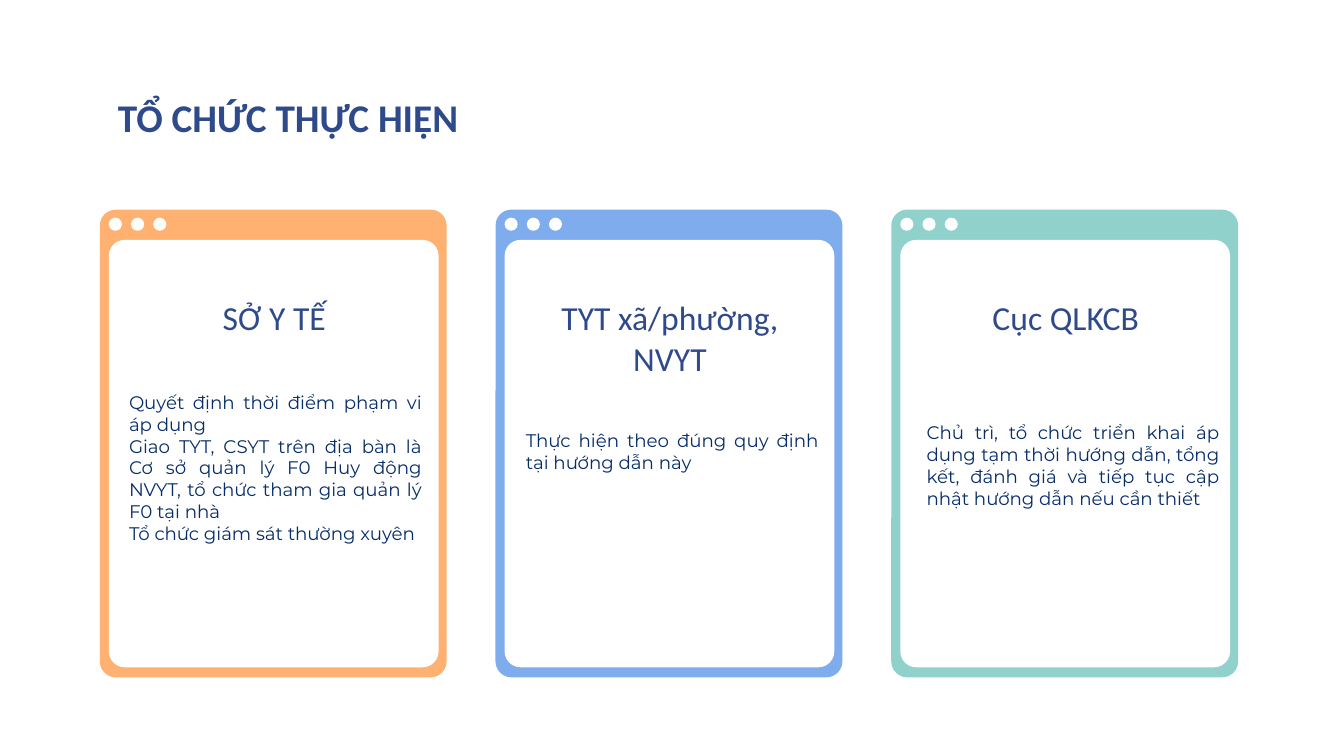
from pptx import Presentation
from pptx.dml.color import RGBColor
from pptx.enum.shapes import MSO_SHAPE
from pptx.enum.text import MSO_ANCHOR, PP_ALIGN
from pptx.util import Inches, Pt

NAVY, INK, WHITE = "2F4A8A", "072D69", "FFFFFF"
CARD_LEFT, CARD_TOP, CARD_W, CARD_H, CARD_PITCH = 0.99, 2.08, 3.44, 4.64, 3.925
CARDS = [
    ("FFB172", "SỞ Y TẾ", 0.16, 1.67,
     "Quyết định thời điểm phạm vi áp dụng\n"
     "Giao TYT, CSYT trên địa bàn là Cơ sở quản lý F0 Huy động NVYT, "
     "tổ chức tham gia quản lý F0 tại nhà\n"
     "Tổ chức giám sát thường xuyên"),
    ("7EACEC", "TYT xã/phường,\vNVYT", 0.17, 2.05,
     "Thực hiện theo đúng quy định tại hướng dẫn này"),
    ("90D1CB", "Cục QLKCB", 0.22, 1.97,
     "Chủ trì, tổ chức triển khai áp dụng tạm thời hướng dẫn, tổng kết, "
     "đánh giá và tiếp tục cập nhật hướng dẫn nếu cần thiết"),
]


def rgb(color):
    """Turn a hex string into a colour."""
    return RGBColor.from_string(color)


def add_block(slide, kind, x, y, w, h, color, adj=None):
    """Add a plain filled shape without line or shadow."""
    sp = slide.shapes.add_shape(kind, Inches(x), Inches(y), Inches(w), Inches(h))
    sp.shadow.inherit = False
    sp.fill.solid()
    sp.fill.fore_color.rgb = rgb(color)
    sp.line.fill.background()
    if adj is not None:
        sp.adjustments[0] = adj


def add_text(slide, x, y, w, h, text, size, font, color, align, bold=False):
    """Add a wrapped text box in a single style."""
    tf = slide.shapes.add_textbox(Inches(x), Inches(y), Inches(w), Inches(h)).text_frame
    tf.word_wrap = True
    tf.vertical_anchor = MSO_ANCHOR.TOP
    tf.margin_left = tf.margin_right = tf.margin_top = tf.margin_bottom = Inches(0.13)
    tf.text = text
    for p in tf.paragraphs:
        p.alignment = align
        p.font.size = Pt(size)
        for r in p.runs:
            r.font.size = Pt(size)
            r.font.name = font
            r.font.bold = bold
            r.font.color.rgb = rgb(color)


def add_title(slide, x, y, w, h):
    """Add the slide title."""
    add_text(slide, x, y, w, h, "TỔ CHỨC THỰC HIỆN", 28, "Calibri", NAVY,
             PP_ALIGN.LEFT, bold=True)


def add_card(slide, x, y, w, h, color, heading, body_dx, body_dy, body):
    """Add a window-like card with its dots, heading and body text."""
    add_block(slide, MSO_SHAPE.ROUNDED_RECTANGLE, x, y, w, h, color, 0.046)
    add_block(slide, MSO_SHAPE.ROUNDED_RECTANGLE, x + 0.09, y + 0.3,
              w - 0.17, h - 0.4, WHITE, 0.048)
    for i in range(3):
        add_block(slide, MSO_SHAPE.OVAL, x + 0.09 + 0.22 * i, y + 0.08, 0.13, 0.13, WHITE)
    add_text(slide, x + 0.15, y + 0.74, 3.16, 0.68, heading, 24, "Calibri", NAVY,
             PP_ALIGN.CENTER)
    add_text(slide, x + body_dx, y + body_dy, 3.16, 1.13, body, 13, "Montserrat", INK,
             PP_ALIGN.JUSTIFY)


def main():
    """Build and save the slide."""
    prs = Presentation()
    prs.slide_width, prs.slide_height = Inches(13.33), Inches(7.5)
    slide = prs.slides.add_slide(prs.slide_layouts[6])
    add_title(slide, 1.04, 0.8, 11.25, 0.68)
    for i, card in enumerate(CARDS):
        add_card(slide, CARD_LEFT + CARD_PITCH * i, CARD_TOP, CARD_W, CARD_H, *card)
    prs.save("out.pptx")


if __name__ == "__main__":
    main()
